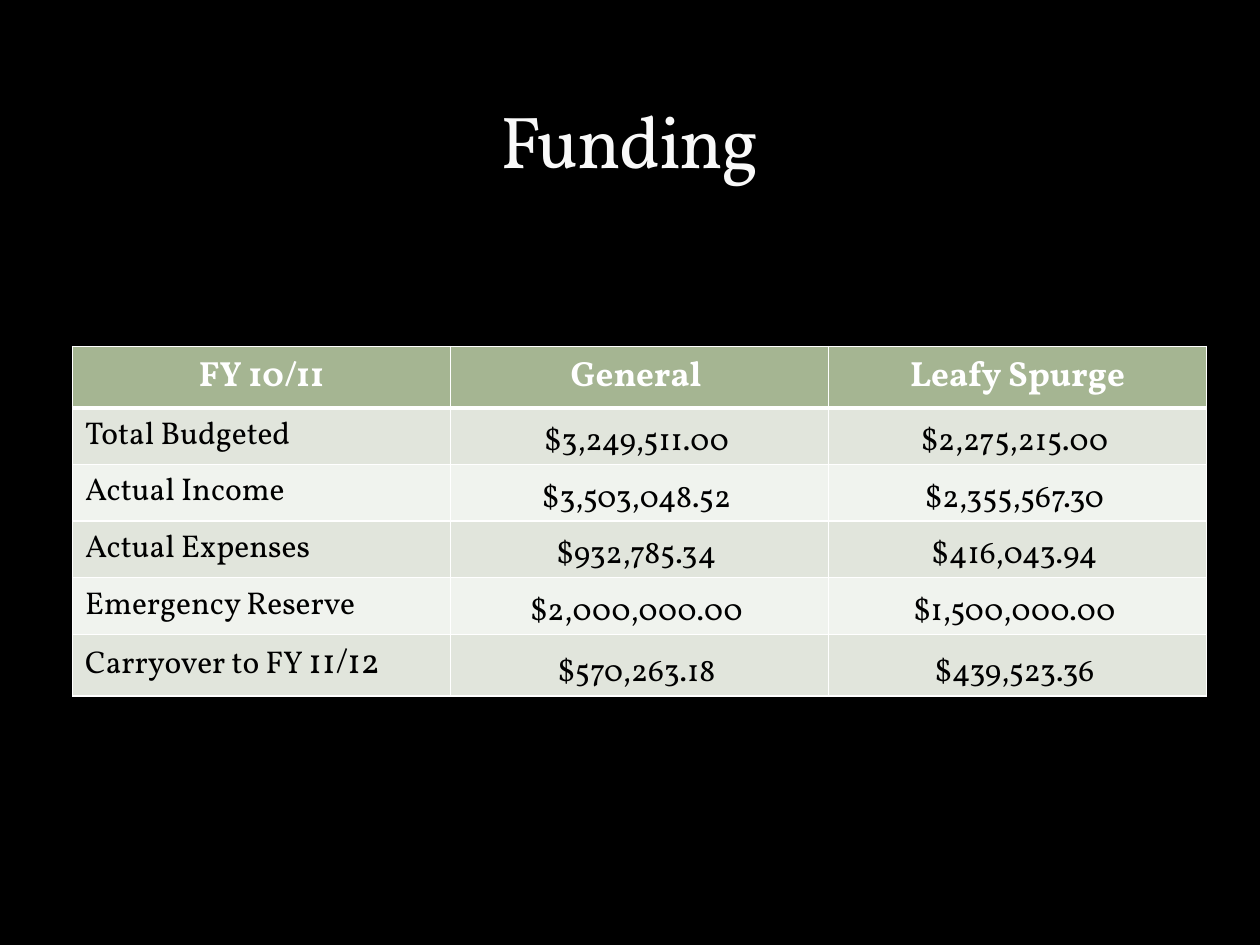
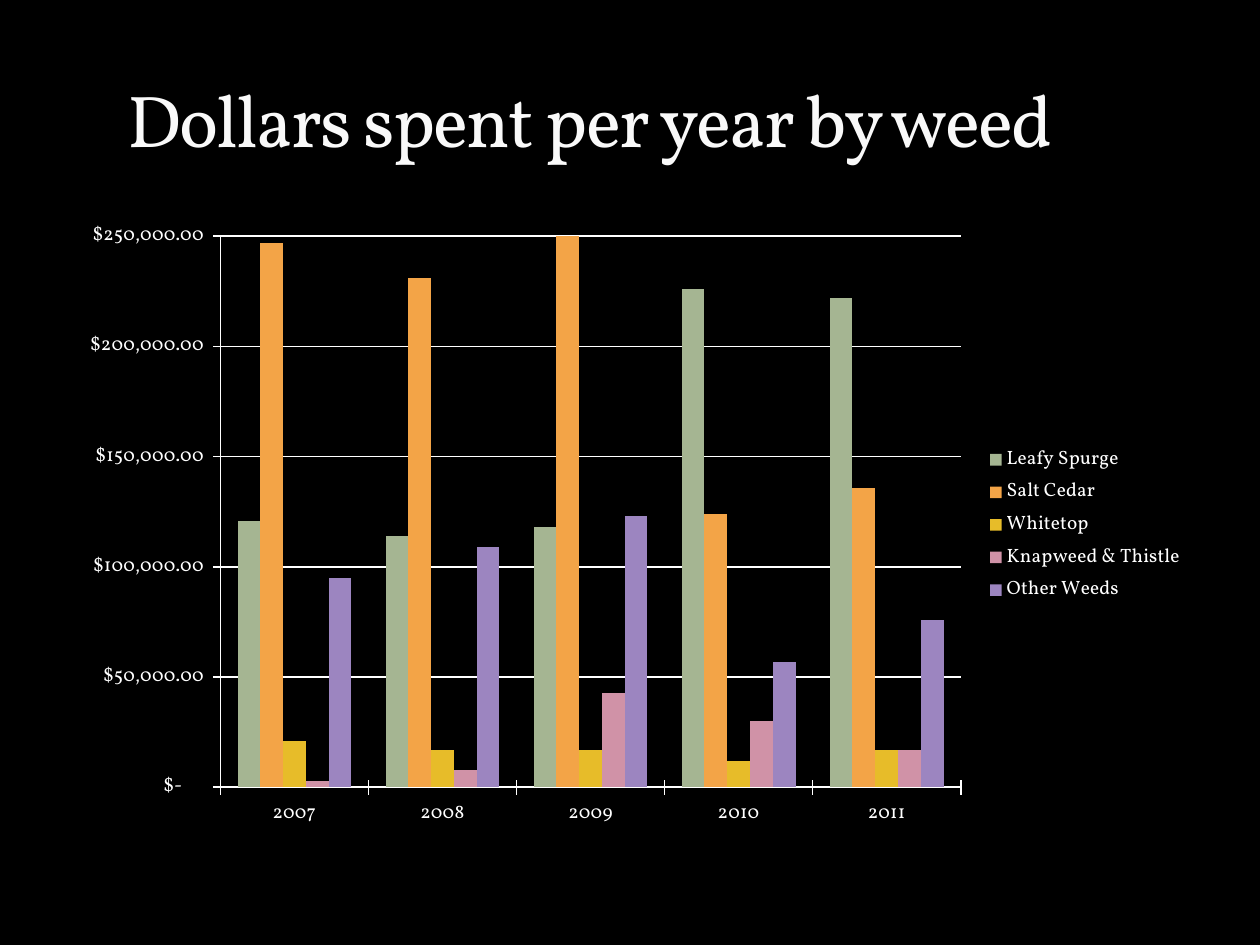
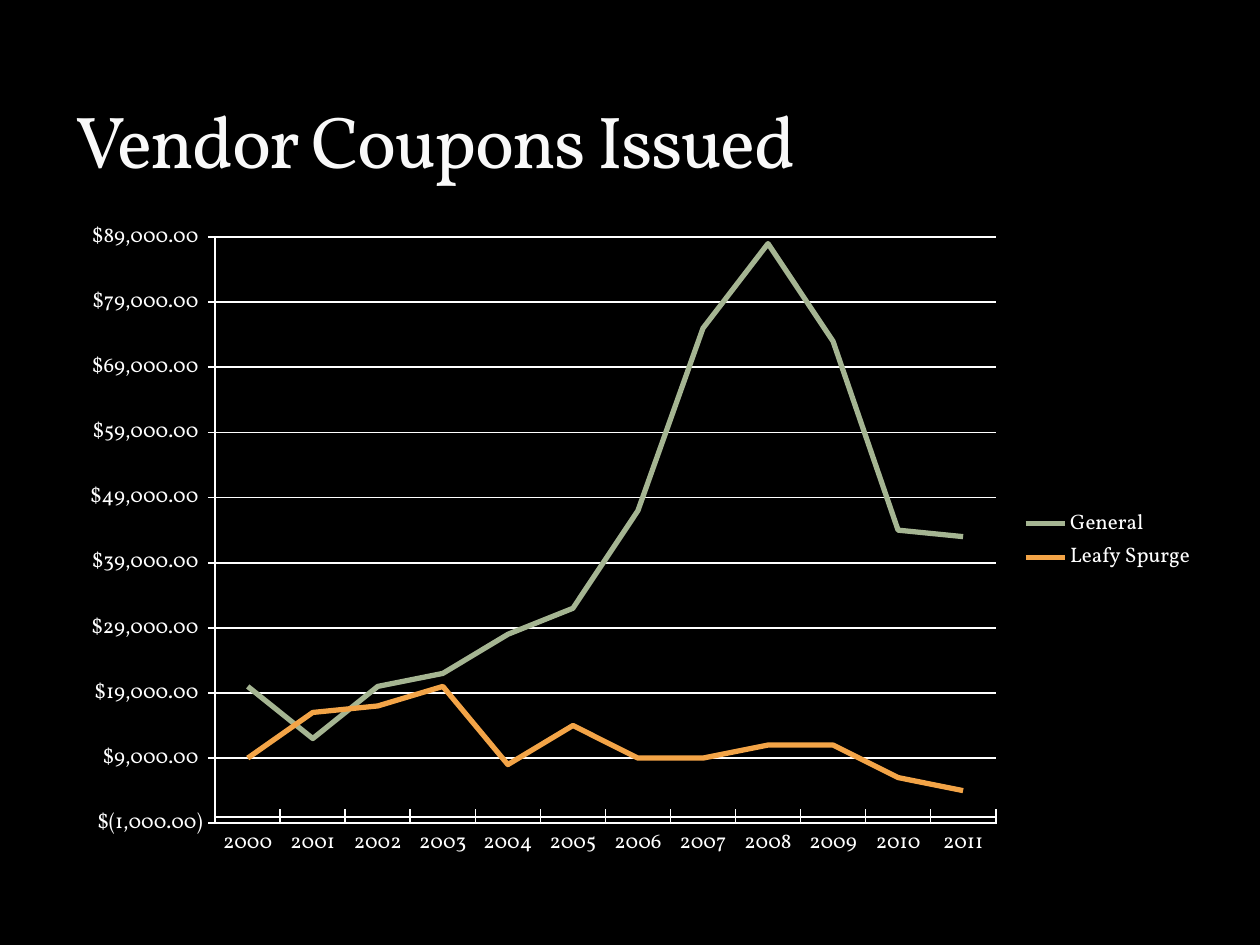
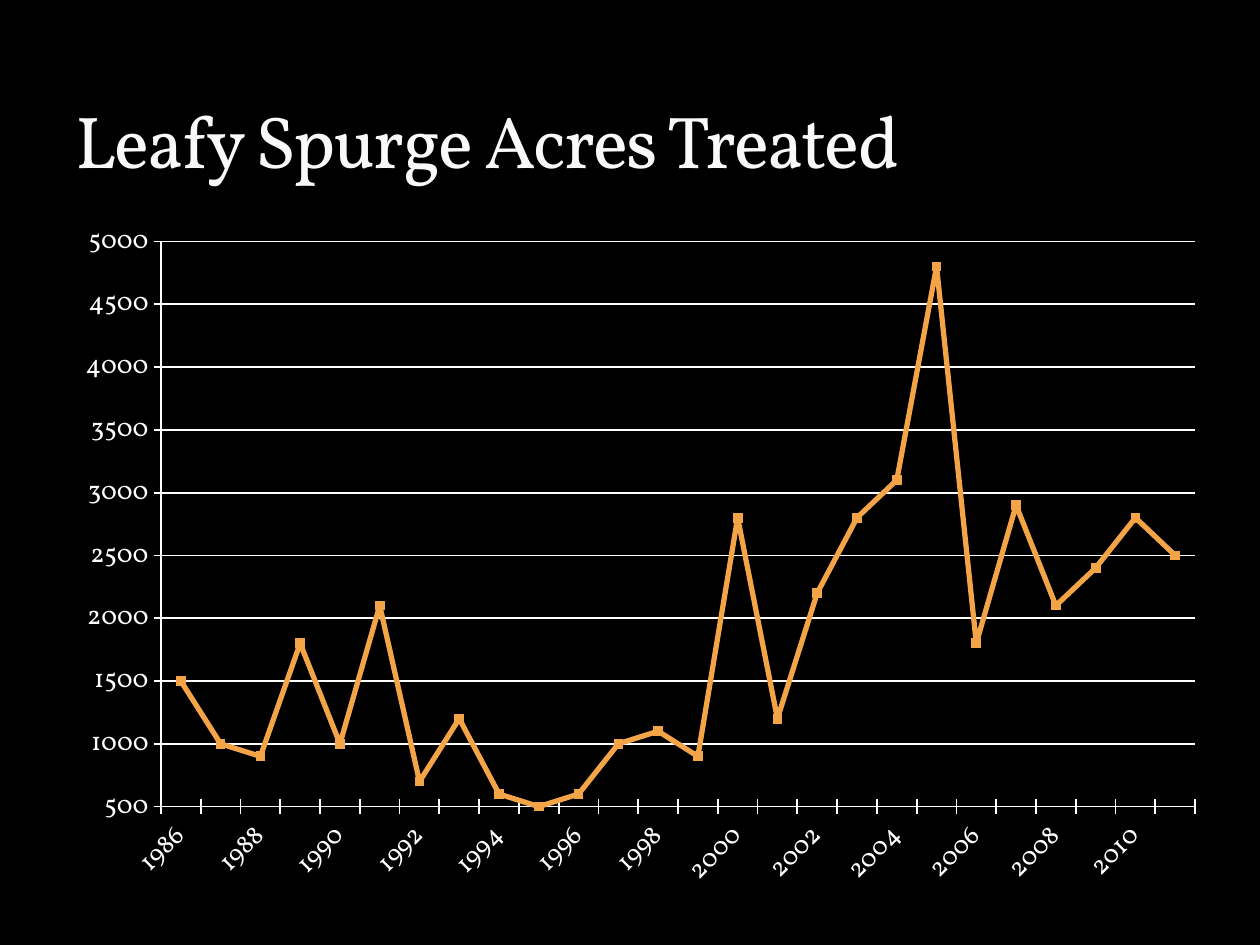
from dataclasses import dataclass

from lxml.etree import SubElement
from pptx import Presentation
from pptx.chart.data import CategoryChartData
from pptx.dml.color import RGBColor
from pptx.enum.chart import XL_CHART_TYPE as Kind, XL_LEGEND_POSITION as LegendSide
from pptx.enum.chart import XL_MARKER_STYLE as Marker, XL_TICK_MARK as Tick
from pptx.enum.text import MSO_ANCHOR as Anchor, PP_ALIGN as Align
from pptx.oxml import parse_xml
from pptx.oxml.ns import nsdecls, qn
from pptx.util import Pt


@dataclass(frozen=True)
class Theme:
    font: str = "Vollkorn"
    back: str = "000000"
    title: str = "F9F9F9"
    outline: str = "3C4422"
    light: str = "FFFFFF"
    dark: str = "000000"
    bands: tuple = ("E1E5DC", "F0F3EE")
    accents: tuple = ("A5B592", "F3A447", "E7BC29", "D092A7", "9C85C0")
    title_size: int = 42
    head_size: int = 20
    body_size: int = 18
    chart_size: int = 10
    rule: int = 1
    head_rule: int = 3
    series_line: int = 3


THEME = Theme()
DOLLARS = '_("$"* #,##0.00_);_("$"* \\(#,##0.00\\);_("$"* "-"??_);_(@_)'
TITLE_BOX = (36, 12, 648, 96)

FUNDING_BOX = (41.5, 198, 648, 179.4)
# Each cell is a list of (text, size) runs.
HEAD, BODY = THEME.head_size, THEME.body_size
FUNDING = [
    [[(name, HEAD)] for name in ("FY 10/11", "General ", "Leafy Spurge")],
    *[[[(value, BODY)] for value in row] for row in (
        ("Total Budgeted", "$3,249,511.00 ", "$2,275,215.00 "),
        ("Actual Income", "$3,503,048.52 ", "$2,355,567.30 "),
        ("Actual Expenses", "$932,785.34 ", "$416,043.94 "),
        ("Emergency Reserve", "$2,000,000.00 ", "$1,500,000.00 "),
    )],
    [[("Carryover to FY ", BODY), ("11/12", HEAD)],
     [("$570,263.18 ", BODY)], [("$439,523.36 ", BODY)]],
]

# "box" places the chart and "plot" its inner plot area, both on the slide.
CHARTS = [
    {
        "title": "Dollars spent per year by weed",
        "title_box": (66, 12, 576, 84),
        "kind": Kind.COLUMN_CLUSTERED,
        "box": (36, 120, 648, 360),
        "plot": (126, 135, 423, 315),
        "label_size": 11,
        "scale": (0, 250000, 50000),
        "format": DOLLARS,
        "legend": True,
        "years": range(2007, 2012),
        "series": {
            "Leafy Spurge": (121000, 114000, 118000, 226000, 222000),
            "Salt Cedar": (247000, 231000, 252000, 124000, 136000),
            "Whitetop": (21000, 17000, 17000, 12000, 17000),
            "Knapweed & Thistle": (3000, 8000, 43000, 30000, 17000),
            "Other Weeds": (95000, 109000, 123000, 57000, 76000),
        },
        "colors": THEME.accents,
    },
    {
        "title": "Vendor Coupons Issued",
        "title_box": TITLE_BOX,
        "kind": Kind.LINE,
        "box": (36, 120, 654, 378),
        "plot": (123, 135.5, 446, 335),
        "label_size": 12,
        "scale": (-1000, 89000, 10000),
        "format": DOLLARS,
        "legend": True,
        "years": range(2000, 2012),
        "series": {
            "General": (20000, 12000, 20000, 22000, 28000, 32000,
                        47000, 75000, 88000, 73000, 44000, 43000),
            "Leafy Spurge": (9000, 16000, 17000, 20000, 8000, 14000,
                             9000, 9000, 11000, 11000, 6000, 4000),
        },
        "colors": THEME.accents,
    },
    {
        "title": "Leafy Spurge Acres Treated",
        "title_box": TITLE_BOX,
        "kind": Kind.LINE_MARKERS_STACKED,
        "box": (36, 120, 660, 396),
        "plot": (92, 138, 591, 323),
        "label_size": 15,
        "label_turn": -45,
        "scale": (500, 5000, 500),
        "format": "General",
        "legend": False,
        "years": range(1986, 2012),
        "series": {
            "Series 1": (1500, 1000, 900, 1800, 1000, 2100, 700, 1200, 600,
                         500, 600, 1000, 1100, 900, 2800, 1200, 2200, 2800,
                         3100, 4800, 1800, 2900, 2100, 2400, 2800, 2500),
        },
        "colors": THEME.accents[1:],
    },
]


def points(values):
    return [Pt(value) for value in values]


def rgb(color):
    return RGBColor.from_string(color)


def style_font(font, size, color, bold=False):
    font.name, font.size, font.bold = THEME.font, Pt(size), bold
    font.color.rgb = rgb(color)


def style_line(line, color, width):
    line.color.rgb = rgb(color)
    line.width = Pt(width)


def add_title(page, text, place, align=Align.LEFT):
    frame = page.shapes.add_textbox(*points(place)).text_frame
    frame.word_wrap = True
    frame.vertical_anchor = Anchor.BOTTOM
    para = frame.paragraphs[0]
    para.alignment = align
    span = para.add_run()
    span.text = text
    style_font(span.font, THEME.title_size, THEME.title)
    props = span.font._element
    props.set("spc", "-100")
    props.insert(0, parse_xml(
        f'<a:ln {nsdecls("a")} w="{Pt(0.25)}"><a:solidFill>'
        f'<a:srgbClr val="{THEME.outline}"><a:alpha val="25000"/></a:srgbClr>'
        '</a:solidFill></a:ln>'))


def add_borders(cell, top, bottom):
    """Draw all four sides; call this before the cell gets its fill."""
    props = cell._tc.get_or_add_tcPr()
    widths = {"L": THEME.rule, "R": THEME.rule, "T": top, "B": bottom}
    for side, width in widths.items():
        props.append(parse_xml(
            f'<a:ln{side} {nsdecls("a")} w="{Pt(width)}"><a:solidFill>'
            f'<a:srgbClr val="{THEME.light}"/></a:solidFill></a:ln{side}>'))


def fill_cell(cell, runs, row, column):
    is_head = row == 0
    add_borders(cell,
                top=THEME.head_rule if row == 1 else THEME.rule,
                bottom=THEME.head_rule if is_head else THEME.rule)
    cell.fill.solid()
    cell.fill.fore_color.rgb = rgb(
        THEME.accents[0] if is_head else THEME.bands[(row - 1) % 2])
    para = cell.text_frame.paragraphs[0]
    if is_head or column:
        para.alignment = Align.CENTER
    if column and not is_head:
        cell.vertical_anchor = Anchor.BOTTOM
        cell.margin_left = cell.margin_right = cell.margin_top = Pt(0.75)
        cell.margin_bottom = 0
    for text, size in runs:
        span = para.add_run()
        span.text = text
        style_font(span.font, size, THEME.light if is_head else THEME.dark, is_head)


def add_funding_table(page):
    table = page.shapes.add_table(
        len(FUNDING), len(FUNDING[0]), *points(FUNDING_BOX)).table
    for row, cells in enumerate(FUNDING):
        for column, runs in enumerate(cells):
            fill_cell(table.cell(row, column), runs, row, column)


def place_plot(chart, box, plot):
    """Fix the inner plot area, as fractions of the chart's box."""
    left, top, width, height = box
    area = chart._chartSpace.chart.plotArea
    for old in area.findall(qn("c:layout")):
        area.remove(old)
    layout = parse_xml(f'<c:layout {nsdecls("c")}><c:manualLayout/></c:layout>')
    settings = {
        "layoutTarget": "inner", "xMode": "edge", "yMode": "edge",
        "x": (plot[0] - left) / width, "y": (plot[1] - top) / height,
        "w": plot[2] / width, "h": plot[3] / height,
    }
    for name, value in settings.items():
        SubElement(layout[0], qn(f"c:{name}")).set("val", str(value))
    area.insert(0, layout)


def style_axes(chart, item):
    values, years = chart.value_axis, chart.category_axis
    for axis in (values, years):
        axis.major_tick_mark = Tick.CROSS
        style_line(axis.format.line, THEME.light, THEME.rule)
        style_font(axis.tick_labels.font, item["label_size"], THEME.light)
    values.minimum_scale, values.maximum_scale, values.major_unit = item["scale"]
    values.has_major_gridlines = True
    style_line(values.major_gridlines.format.line, THEME.light, THEME.rule)
    values.tick_labels.number_format = item["format"]
    values.tick_labels.number_format_is_linked = False
    if "label_turn" in item:
        body = years._element.find(qn("c:txPr")).find(qn("a:bodyPr"))
        body.set("rot", str(item["label_turn"] * 60000))
        body.set("vert", "horz")


def style_series(chart, item):
    plot = chart.plots[0]
    plot.vary_by_categories = False
    is_column = item["kind"] == Kind.COLUMN_CLUSTERED
    if is_column:
        plot.gap_width, plot.overlap = 150, 0
    for series, color in zip(plot.series, item["colors"]):
        if is_column:
            series.format.fill.solid()
            series.format.fill.fore_color.rgb = rgb(color)
            continue
        series.smooth = False
        style_line(series.format.line, color, THEME.series_line)
        if item["kind"] == Kind.LINE_MARKERS_STACKED:
            marker = series.marker
            marker.style, marker.size = Marker.SQUARE, 5
            marker.format.fill.solid()
            marker.format.fill.fore_color.rgb = rgb(color)
            style_line(marker.format.line, color, THEME.rule)


def add_year_chart(page, item):
    data = CategoryChartData()
    data.categories = [str(year) for year in item["years"]]
    for name, values in item["series"].items():
        data.add_series(name, values)
    chart = page.shapes.add_chart(item["kind"], *points(item["box"]), data).chart
    chart.has_title = False
    style_font(chart.font, THEME.chart_size, THEME.light)
    chart.has_legend = item["legend"]
    if item["legend"]:
        chart.legend.position = LegendSide.RIGHT
        chart.legend.include_in_layout = False
        style_font(chart.legend.font, item["label_size"], THEME.light)
    style_axes(chart, item)
    style_series(chart, item)
    place_plot(chart, item["box"], item["plot"])


def main():
    deck = Presentation()
    deck.slide_width, deck.slide_height = Pt(720), Pt(540)
    back = deck.slide_master.background.fill
    back.solid()
    back.fore_color.rgb = rgb(THEME.back)
    blank = deck.slide_layouts[6]

    page = deck.slides.add_slide(blank)
    add_funding_table(page)
    add_title(page, "Funding", TITLE_BOX, Align.CENTER)

    for item in CHARTS:
        page = deck.slides.add_slide(blank)
        add_title(page, item["title"], item["title_box"])
        add_year_chart(page, item)

    deck.save("out.pptx")


if __name__ == "__main__":
    main()
